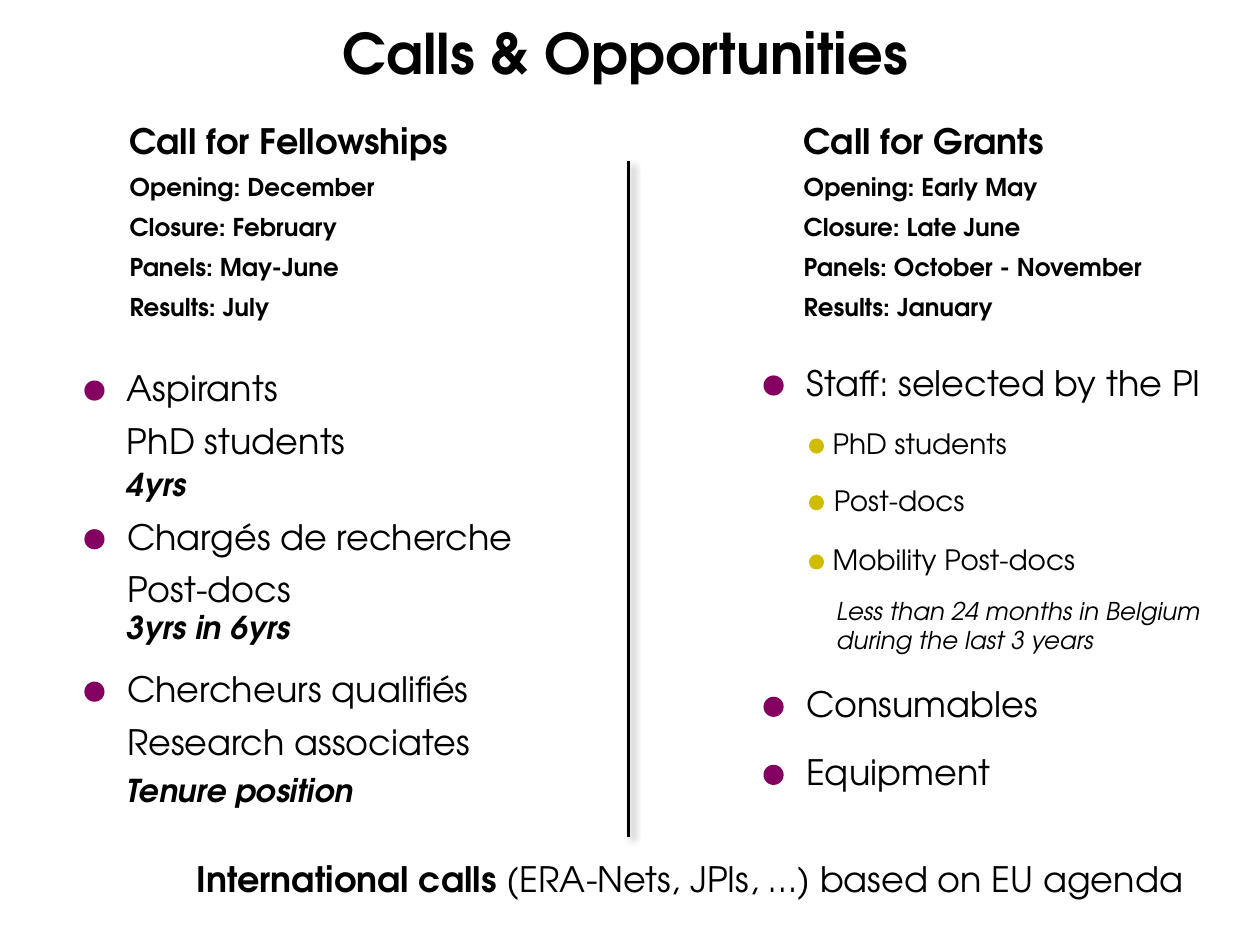
import pptx
import pptx.util
import pptx.dml.color
import pptx.enum.shapes
import pptx.enum.text
import pptx.oxml
import pptx.oxml.ns

Inches, Pt = pptx.util.Inches, pptx.util.Pt
FONT = "TeX Gyre Adventor"
BLACK, PURPLE, GOLD = "000000", "840060", "CFBC00"
SHADOW = (
    f'<a:effectLst {pptx.oxml.ns.nsdecls("a")}>'
    '<a:outerShdw blurRad="50800" dist="38100" dir="2700000" algn="tl" rotWithShape="0">'
    '<a:srgbClr val="000000"><a:alpha val="40000"/></a:srgbClr>'
    '</a:outerShdw></a:effectLst>'
)


def color(hex_value):
    return pptx.dml.color.RGBColor.from_string(hex_value)


def style(font, size, bold=False, italic=False):
    font.name, font.size, font.bold, font.italic = FONT, Pt(size), bold, italic
    font.color.rgb = color(BLACK)


def add_text(slide, left, top, width, height, lines, size, bold=False,
             italic=False, rest_size=None, centered=False):
    """Add a text box; rest_size applies to the lines after the first."""
    box = slide.shapes.add_textbox(
        Inches(left), Inches(top), Inches(width), Inches(height))
    frame = box.text_frame
    frame.word_wrap = True
    frame.text = "\n".join(lines)
    for index, paragraph in enumerate(frame.paragraphs):
        style(paragraph.font, rest_size if index and rest_size else size, bold, italic)
        if centered:
            paragraph.alignment = pptx.enum.text.PP_ALIGN.CENTER
        else:
            paragraph.space_after = Pt(6)
    return frame


def add_dot(slide, left, top, diameter, fill):
    dot = slide.shapes.add_shape(
        pptx.enum.shapes.MSO_SHAPE.OVAL,
        Inches(left), Inches(top), Inches(diameter), Inches(diameter))
    dot.shadow.inherit = False
    dot.fill.solid()
    dot.fill.fore_color.rgb = color(fill)
    dot.line.fill.background()


def add_bullet_item(slide, left, top, width, lines):
    """Add a purple dot with its 20 pt text to the right."""
    add_dot(slide, left, top + 0.16, 0.16, PURPLE)
    height = 0.44 + 0.42 * (len(lines) - 1)
    add_text(slide, left + 0.24, top, width, height, lines, 20)


def add_divider(slide, x, top, bottom):
    divider = slide.shapes.add_connector(
        pptx.enum.shapes.MSO_CONNECTOR.STRAIGHT,
        Inches(x), Inches(top), Inches(x), Inches(bottom))
    divider.line.color.rgb = color(BLACK)
    divider.line.width = Pt(1.5)
    divider._element.spPr.append(pptx.oxml.parse_xml(SHADOW))


def main():
    deck = pptx.Presentation()
    deck.slide_width, deck.slide_height = Inches(10), Inches(7.5)
    slide = deck.slides.add_slide(deck.slide_layouts[6])

    # Title
    add_text(slide, 0.2, 0.1, 9.53, 0.64, ["Calls & Opportunities"], 32,
             bold=True, centered=True)

    # Fellowship categories, each with its duration
    fellowships = [
        (2.86, 2.2, "Aspirants", "PhD students", 3.64, "4yrs"),
        (4.04, 3.32, "Chargés de recherche", "Post-docs", 4.78, "3yrs in 6yrs"),
        (5.25, 3.32, "Chercheurs qualifiés", "Research associates", 6.07,
         "Tenure position"),
    ]
    for top, width, name, level, duration_top, duration in fellowships:
        add_bullet_item(slide, 0.67, top, width, [name, level])
        add_text(slide, 0.91, duration_top, 2.2, 0.4, [duration], 18,
                 bold=True, italic=True)

    # What grants pay for
    for top, width, item in [(2.82, 3.43, "Staff: selected by the PI"),
                             (5.37, 2.13, "Consumables"),
                             (5.91, 1.81, "Equipment")]:
        add_bullet_item(slide, 6.06, top, width, [item])

    # Kinds of staff
    for left, top, width, staff in [(6.51, 3.34, 1.64, "PhD students"),
                                    (6.52, 3.79, 1.64, "Post-docs"),
                                    (6.51, 4.26, 2.31, "Mobility Post-docs")]:
        add_text(slide, left, top, width, 0.37, [staff], 16)
        add_dot(slide, 6.42, top + 0.14, 0.12, GOLD)
    add_text(slide, 6.54, 4.68, 3.27, 0.57,
             ["Less than 24 months in Belgium during the last 3 years"], 14,
             italic=True)

    # Calendars of the two calls
    steps = ["Opening", "Closure", "Panels", "Results"]
    calendars = [
        (0.93, 3.73, "Call for Fellowships",
         ["December", "February", "May-June", "July"]),
        (6.28, 3.31, "Call for Grants",
         ["Early May", "Late June", "October - November", "January"]),
    ]
    for left, width, heading, dates in calendars:
        schedule = [f"{step}: {date}" for step, date in zip(steps, dates)]
        add_text(slide, left, 0.9, width, 1.72, [heading] + schedule, 20,
                 bold=True, rest_size=14)

    # Divider between the columns
    add_divider(slide, 4.99, 1.28, 6.64)

    # International calls
    footer = add_text(slide, 1.46, 6.76, 8.27, 0.44, ["International calls "], 20)
    footer.paragraphs[0].runs[0].font.bold = True
    footer.paragraphs[0].add_run().text = "(ERA-Nets, JPIs, …) based on EU agenda"

    deck.save("out.pptx")


if __name__ == "__main__":
    main()
